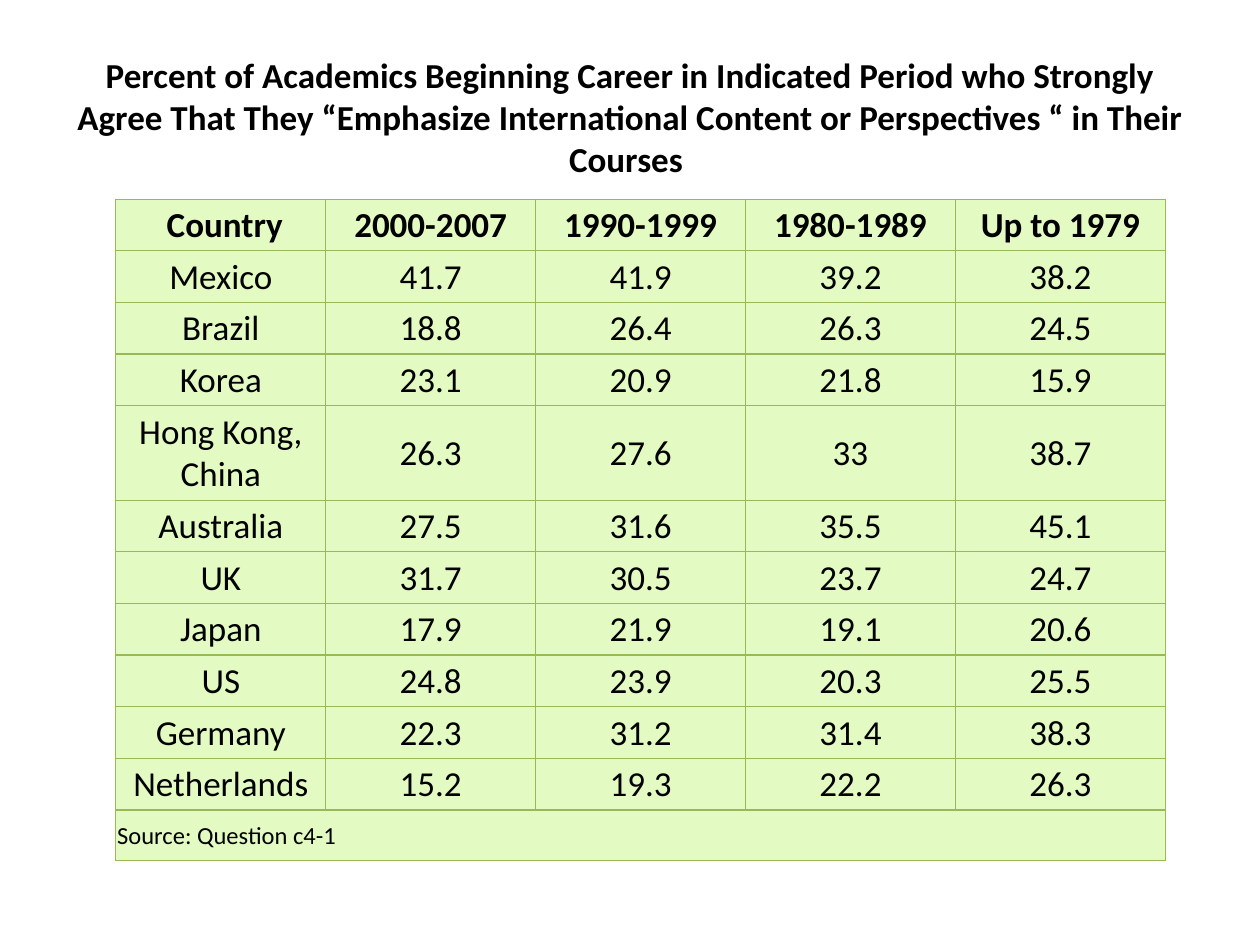
"""Build a slide with a table of academics' emphasis on international content."""
from lxml.etree import SubElement
from pptx import Presentation
from pptx.dml.color import RGBColor
from pptx.enum.text import MSO_ANCHOR, PP_ALIGN
from pptx.oxml.ns import qn
from pptx.util import Inches, Pt

BLACK = RGBColor(0x00, 0x00, 0x00)
LIGHT_GREEN = RGBColor(0xE3, 0xFB, 0xC2)
BORDER_GREEN = RGBColor(0x98, 0xB9, 0x55)

ROWS = [
    ("\u00a0Country".replace("\u00a0", " "), "2000-2007", "1990-1999", "1980-1989", "Up to 1979"),
    ("Mexico", "41.7", "41.9", "39.2", "38.2"),
    ("Brazil", "18.8", "26.4", "26.3", "24.5"),
    ("Korea", "23.1", "20.9", "21.8", "15.9"),
    ("Hong Kong, China", "26.3", "27.6", "33", "38.7"),
    ("Australia", "27.5", "31.6", "35.5", "45.1"),
    ("UK", "31.7", "30.5", "23.7", "24.7"),
    ("Japan", "17.9", "21.9", "19.1", "20.6"),
    ("US", "24.8", "23.9", "20.3", "25.5"),
    ("Germany", "22.3", "31.2", "31.4", "38.3"),
    ("Netherlands", "15.2", "19.3", "22.2", "26.3"),
    ("Source: Question c4-1", "", "", "", ""),
]
HEADER_ROW = 0
TWO_LINE_ROW = 4
SOURCE_ROW = len(ROWS) - 1


def format_text(paragraph, size, bold, alignment):
    paragraph.alignment = alignment
    for run in paragraph.runs:
        run.font.name = "Calibri"
        run.font.size = Pt(size)
        run.font.bold = bold
        run.font.color.rgb = BLACK


def add_borders(cell):
    properties = cell._tc.get_or_add_tcPr()
    for side in ("a:lnL", "a:lnR", "a:lnT", "a:lnB"):
        line = SubElement(properties, qn(side), w=str(Pt(0.75)))
        fill = SubElement(line, qn("a:solidFill"))
        SubElement(fill, qn("a:srgbClr"), val=str(BORDER_GREEN))


presentation = Presentation()
presentation.slide_width = Inches(10)
presentation.slide_height = Inches(7.5)
slide = presentation.slides.add_slide(presentation.slide_layouts[5])

title = slide.shapes.title
title.left, title.top = Inches(0.5), Inches(0.3)
title.width, title.height = Inches(9), Inches(1.25)
title.text_frame.text = (
    "Percent of Academics Beginning Career in Indicated Period who Strongly Agree "
    "That They “Emphasize International Content or Perspectives “ in Their Courses "
)
title.text_frame.vertical_anchor = MSO_ANCHOR.MIDDLE
format_text(title.text_frame.paragraphs[0], 20, True, PP_ALIGN.CENTER)

table = slide.shapes.add_table(
    len(ROWS), len(ROWS[0]), Inches(0.92), Inches(1.58), Inches(8.33), Inches(5.25)
).table
table.horz_banding = False
for column in table.columns:
    column.width = Inches(8.33 / len(ROWS[0]))

for row_index, values in enumerate(ROWS):
    is_source = row_index == SOURCE_ROW
    table.rows[row_index].height = Inches(
        0.75 if row_index == TWO_LINE_ROW else 0.4 if is_source else 0.41
    )
    for column_index, value in enumerate(values):
        cell = table.cell(row_index, column_index)
        cell.text_frame.text = value
        cell.vertical_anchor = MSO_ANCHOR.MIDDLE
        cell.margin_left = cell.margin_right = cell.margin_top = Inches(0.01)
        cell.margin_bottom = 0
        add_borders(cell)
        cell.fill.solid()
        cell.fill.fore_color.rgb = LIGHT_GREEN
        format_text(
            cell.text_frame.paragraphs[0],
            14 if is_source else 20,
            row_index == HEADER_ROW,
            PP_ALIGN.LEFT if is_source else PP_ALIGN.CENTER,
        )

table.cell(SOURCE_ROW, 0).merge(table.cell(SOURCE_ROW, len(ROWS[0]) - 1))

presentation.save("out.pptx")
